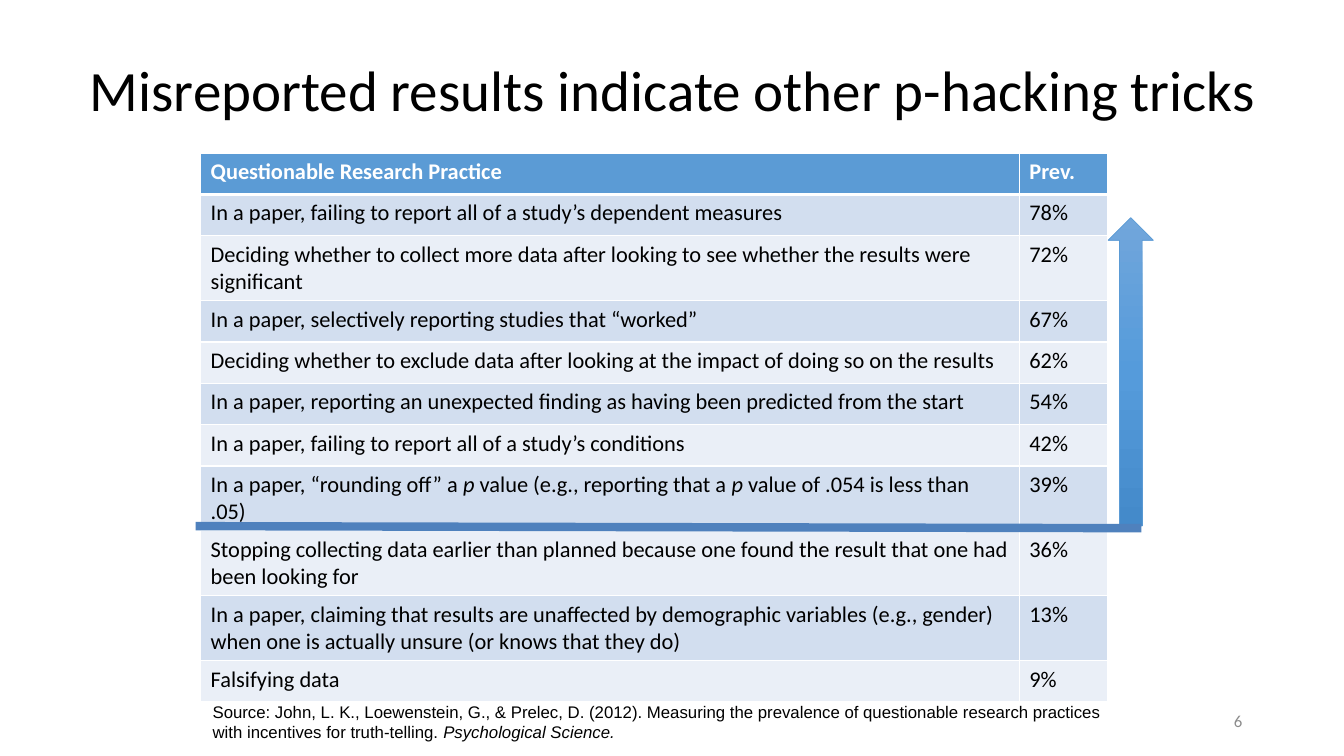
import pptx
import pptx.util
import pptx.dml.color
import pptx.enum.dml
import pptx.enum.shapes
import pptx.enum.text
import pptx.oxml
import pptx.oxml.ns
import lxml.etree

Inches, Pt = pptx.util.Inches, pptx.util.Pt
ALIGN = pptx.enum.text.PP_ALIGN
ANCHOR = pptx.enum.text.MSO_ANCHOR

COLORS = {
    "black": "000000", "white": "FFFFFF", "grey": "8C8C8C",
    "header": "5B9BD5", "band_dark": "D2DEEF", "band_light": "EAEFF7",
    "divider": "4F81BD", "arrow_line": "5B9BD5",
    "arrow_top": "71A6DB", "arrow_middle": "559BDB", "arrow_bottom": "448ACA",
}

# Asterisks enclose italic words
PRACTICES = [
    ("Questionable Research Practice", "Prev."),
    ("In a paper, failing to report all of a study’s dependent measures", "78%"),
    ("Deciding whether to collect more data after looking to see whether "
     "the results were significant", "72%"),
    ("In a paper, selectively reporting studies that “worked”", "67%"),
    ("Deciding whether to exclude data after looking at the impact of doing so "
     "on the results", "62%"),
    ("In a paper, reporting an unexpected finding as having been predicted "
     "from the start", "54%"),
    ("In a paper, failing to report all of a study’s conditions", "42%"),
    ("In a paper, “rounding off” a *p *value (e.g., reporting that a *p *value "
     "of .054 is less than .05)", "39%"),
    ("Stopping collecting data earlier than planned because one found the result "
     "that one had been looking for", "36%"),
    ("In a paper, claiming that results are unaffected by demographic variables "
     "(e.g., gender) when one is actually unsure (or knows that they do)", "13%"),
    ("Falsifying data", "9%"),
]
SOURCE = [
    "Source: John, L. K., Loewenstein, G., & Prelec, D. (2012). Measuring the "
    "prevalence of questionable research practices",
    "with incentives for truth-telling. *Psychological Science.*",
]


def rgb(name):
    return pptx.dml.color.RGBColor.from_string(COLORS[name])


def add_xml(parent, name, **attributes):
    element = lxml.etree.SubElement(parent, pptx.oxml.ns.qn(name))
    for key, value in attributes.items():
        element.set(key, str(value))
    return element


class SlideBuilder:
    def __init__(self, page, font="Calibri"):
        self.page = page
        self.font = font

    def fill_text(self, frame, lines, color, para_format=None, **font_format):
        """Fill a text frame with one paragraph per line."""
        font_format = {"name": self.font, **font_format}
        for number, line in enumerate(lines):
            para = frame.add_paragraph() if number else frame.paragraphs[0]
            for key, value in (para_format or {}).items():
                setattr(para, key, value)
            for part, words in enumerate(line.split("*")):
                if not words:
                    continue
                span = para.add_run()
                span.text = words
                for key, value in {**font_format, "italic": part % 2 == 1}.items():
                    setattr(span.font, key, value)
                span.font.color.rgb = rgb(color)

    def text(self, place, lines, color="black", frame_format=None, **formats):
        box = self.page.shapes.add_textbox(*map(Inches, place))
        for key, value in {"word_wrap": True, **(frame_format or {})}.items():
            setattr(box.text_frame, key, value)
        self.fill_text(box.text_frame, lines, color, **formats)

    def cell_borders(self, cell, bottom):
        properties = cell._tc.get_or_add_tcPr()
        widths = {"a:lnL": 1, "a:lnR": 1, "a:lnT": 1, "a:lnB": bottom}
        for position, (side, width) in enumerate(widths.items()):
            line = add_xml(properties, side, w=Pt(width))
            add_xml(add_xml(line, "a:solidFill"), "a:srgbClr", val=COLORS["white"])
            properties.insert(position, line)

    def table(self, place, widths, row_height, rows):
        height = row_height * len(rows)
        grid = self.page.shapes.add_table(
            len(rows), len(widths), *map(Inches, (*place, sum(widths), height))).table
        for column, width in zip(grid.columns, widths):
            column.width = Inches(width)
        for number, values in enumerate(rows):
            grid.rows[number].height = Inches(row_height)
            header = number == 0
            band = "header" if header else "band_dark" if number % 2 else "band_light"
            for cell, value in zip(grid.rows[number].cells, values):
                cell.fill.solid()
                cell.fill.fore_color.rgb = rgb(band)
                self.cell_borders(cell, 3 if header else 1)
                self.fill_text(cell.text_frame, [value], "white" if header else "black",
                               size=Pt(16), bold=header)

    def up_arrow(self, place, stops):
        arrow = self.page.shapes.add_shape(
            pptx.enum.shapes.MSO_SHAPE.UP_ARROW, *map(Inches, place))
        arrow.shadow.inherit = False
        arrow.line.color.rgb = rgb("arrow_line")
        arrow.line.width = Pt(0.5)
        # Three-stop gradient running from top to bottom
        arrow.fill.gradient()
        gradient = arrow._element.spPr.find(pptx.oxml.ns.qn("a:gradFill"))
        for child in list(gradient):
            gradient.remove(child)
        stop_list = add_xml(gradient, "a:gsLst")
        for percent, color in stops:
            stop = add_xml(stop_list, "a:gs", pos=percent * 1000)
            add_xml(stop, "a:srgbClr", val=COLORS[color])
        add_xml(gradient, "a:lin", ang=90 * 60000, scaled=0)

    def line(self, start, end, color, width):
        rule = self.page.shapes.add_connector(
            pptx.enum.shapes.MSO_CONNECTOR.STRAIGHT, *map(Inches, (*start, *end)))
        rule.line.color.rgb = rgb(color)
        rule.line.width = Pt(width)
        add_xml(rule._element.spPr, "a:effectLst")


def main():
    deck = pptx.Presentation()
    deck.slide_width, deck.slide_height = Inches(13.33), Inches(7.5)
    builder = SlideBuilder(deck.slides.add_slide(deck.slide_layouts[6]))

    # Table of practices
    builder.table((1.99, 1.52), (8.12, 0.88), 0.41, PRACTICES)

    # Slide number and source
    builder.text((9.42, 6.95, 3, 0.4), ["6"], "grey",
                 frame_format={"vertical_anchor": ANCHOR.MIDDLE},
                 para_format={"alignment": ALIGN.RIGHT}, size=Pt(12))
    builder.text((2.01, 6.91, 9.05, 0.5), SOURCE,
                 frame_format={"word_wrap": False,
                               "auto_size": pptx.enum.text.MSO_AUTO_SIZE.SHAPE_TO_FIT_TEXT},
                 name="Arial", size=Pt(12))

    # Arrow and dividing line
    builder.up_arrow((10.99, 2.16, 0.45, 3.06),
                     [(0, "arrow_top"), (50, "arrow_middle"), (100, "arrow_bottom")])
    builder.line((1.94, 5.22), (11.32, 5.24), "divider", 6)

    # Title
    builder.text((0.67, 0.3, 12, 1.25),
                 ["Misreported results indicate other p-hacking tricks"],
                 frame_format={"vertical_anchor": ANCHOR.MIDDLE},
                 para_format={"alignment": ALIGN.CENTER, "line_spacing": 0.9},
                 size=Pt(40.7))

    deck.save("out.pptx")


if __name__ == "__main__":
    main()
